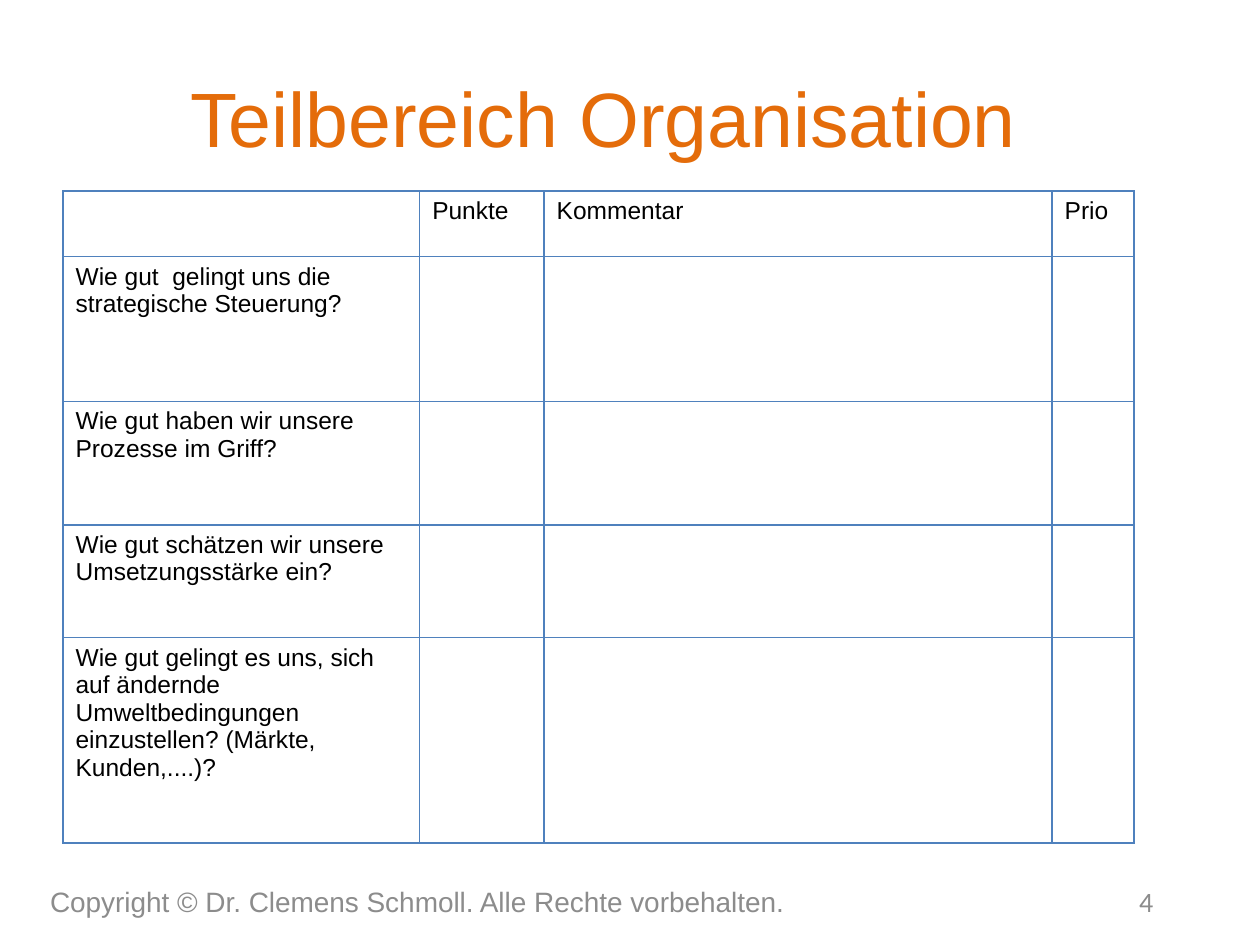
from lxml.etree import SubElement
from pptx import Presentation
from pptx.dml.color import RGBColor
from pptx.enum.text import MSO_ANCHOR, PP_ALIGN
from pptx.oxml.ns import qn
from pptx.util import Cm, Pt

HEADERS = ["", "Punkte", "Kommentar", "Prio"]
QUESTIONS = [
    "Wie gut  gelingt uns die strategische Steuerung?",
    "Wie gut haben wir unsere Prozesse im Griff?",
    "Wie gut schätzen wir unsere Umsetzungsstärke ein?",
    "Wie gut gelingt es uns, sich auf ändernde Umweltbedingungen "
    "einzustellen? (Märkte, Kunden,....)?",
]
COL_WIDTHS = [7.19, 2.51, 10.24, 1.65]
ROW_HEIGHTS = [1.32, 2.92, 2.49, 2.27, 4.14]
ORANGE, GREY, BLUE, BLACK = "E46C0A", "8C8C8C", "4F81BD", "000000"


def color(value):
    return RGBColor.from_string(value)


def write(tf, text, size=14, font="Arial", fill=BLACK, align=PP_ALIGN.LEFT):
    p = tf.paragraphs[0]
    p.alignment = align
    r = p.add_run()
    r.text = text
    r.font.size = Pt(size)
    r.font.name = font
    r.font.color.rgb = color(fill)


def add_text(s, box, text, **fmt):
    tf = s.shapes.add_textbox(*map(Cm, box)).text_frame
    tf.word_wrap = True
    tf.vertical_anchor = MSO_ANCHOR.MIDDLE
    write(tf, text, **fmt)


def add_borders(cell, value, width):
    tcPr = cell._tc.get_or_add_tcPr()
    for side in ("lnL", "lnR", "lnT", "lnB"):
        ln = SubElement(tcPr, qn(f"a:{side}"), w=str(Pt(width)))
        fill = SubElement(ln, qn("a:solidFill"))
        SubElement(fill, qn("a:srgbClr"), val=value)


def add_question_table(s, left, top):
    rows = [HEADERS] + [[q, "", "", ""] for q in QUESTIONS]
    box = left, top, sum(COL_WIDTHS), sum(ROW_HEIGHTS)
    table = s.shapes.add_table(len(rows), len(HEADERS), *map(Cm, box)).table
    table.first_row = table.horz_banding = False
    for col, width in zip(table.columns, COL_WIDTHS):
        col.width = Cm(width)
    for row, height, texts in zip(table.rows, ROW_HEIGHTS, rows):
        row.height = Cm(height)
        for cell, text in zip(row.cells, texts):
            add_borders(cell, BLUE, 1)
            cell.fill.background()
            if text:
                write(cell.text_frame, text)


def add_footer(s, left, top, width, height):
    number_width = 5.92
    add_text(s, (left, top, 16.15, height),
             "Copyright © Dr. Clemens Schmoll. Alle Rechte vorbehalten.",
             size=16, fill=GREY)
    add_text(s, (left + width - number_width, top, number_width, height), "4",
             size=16, font="Calibri", fill=GREY, align=PP_ALIGN.RIGHT)


def main():
    prs = Presentation()
    prs.slide_width, prs.slide_height = Cm(25.4), Cm(19.05)
    s = prs.slides.add_slide(prs.slide_layouts[6])
    add_text(s, (1.27, 0.76, 22.23, 3.18), "Teilbereich Organisation ",
             size=44, fill=ORANGE, align=PP_ALIGN.CENTER)
    add_question_table(s, 1.27, 3.85)
    add_footer(s, 0.76, 17.65, 22.74, 1.02)
    prs.save("out.pptx")


if __name__ == "__main__":
    main()
